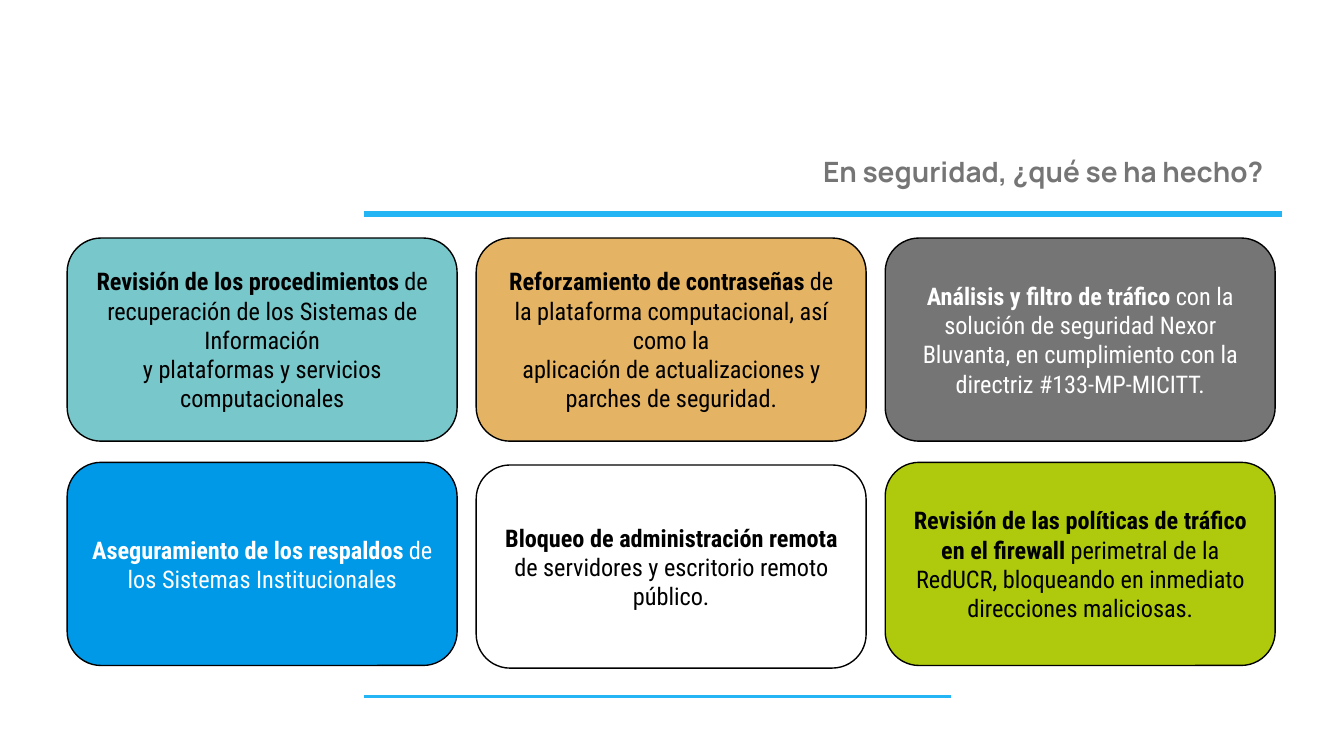
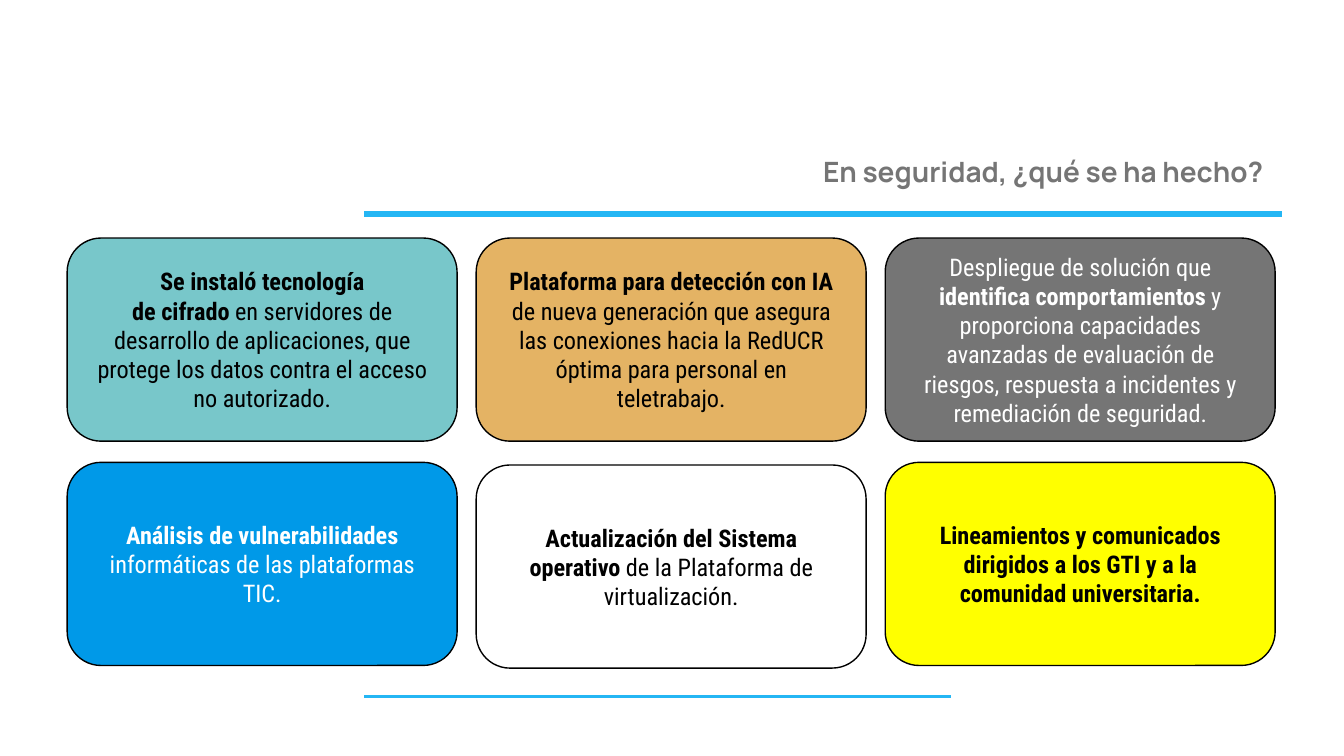
from lxml import etree
from pptx import Presentation
from pptx import util as u
from pptx.dml.color import RGBColor
from pptx.enum import shapes, text
from pptx.oxml.ns import qn

TITLE = "En seguridad, ¿qué se ha hecho?"
TITLE_FONT = "Manrope"
CARD_FONT = "Roboto Condensed"
BLACK, WHITE, GRAY, SKY = "000000", "FFFFFF", "757575", "24B6F4"
TEAL, SAND, BLUE, LIME, YELLOW = "78C7CA", "E4B364", "0099E8", "AFCA0C", "FFFF00"

COLUMNS = 3
GRID_BOX = (1.27, 4.5, 22.83, 8.08)
CARD_WIDTH, CARD_HEIGHT = 7.37, 3.84
CENTER_DROP = 0.05
TITLE_BOX = (6.81, 2.67, 17.32, 1.14)
RULES = [(6.88, 4.04, 17.35, 3), (6.88, 13.16, 11.1, 1.5)]

MEASURES = [
    (TEAL, BLACK, ["**Revisión de los procedimientos** de recuperación de los Sistemas de Información",
                   "y plataformas y servicios computacionales"]),
    (SAND, BLACK, ["**Reforzamiento de contraseñas** de la plataforma computacional, así como la",
                   "aplicación de actualizaciones y parches de seguridad."]),
    (GRAY, WHITE, ["**Análisis y filtro de tráfico** con la solución de seguridad Nexor",
                   "Bluvanta, en cumplimiento con la directriz #133-MP-MICITT."]),
    (BLUE, WHITE, ["**Aseguramiento de los respaldos** de los Sistemas Institucionales"]),
    (WHITE, BLACK, ["**Bloqueo de administración remota** de servidores y escritorio remoto público."]),
    (LIME, BLACK, ["**Revisión de las políticas de tráfico en el firewall** perimetral de la RedUCR, "
                   "bloqueando en inmediato direcciones maliciosas."]),
]
IMPROVEMENTS = [
    (TEAL, BLACK, ["**Se instaló tecnología**",
                   "**de cifrado** en servidores de desarrollo de aplicaciones, que protege los datos "
                   "contra el acceso no autorizado."]),
    (SAND, BLACK, ["**Plataforma para detección con IA** de nueva generación que asegura las conexiones "
                   "hacia la RedUCR óptima para personal en teletrabajo."]),
    (GRAY, WHITE, ["Despliegue de solución que **identifica comportamientos** y proporciona capacidades "
                   "avanzadas de evaluación de riesgos, respuesta a incidentes y remediación de seguridad."]),
    (BLUE, WHITE, ["**Análisis de vulnerabilidades** informáticas de las plataformas TIC."]),
    (WHITE, BLACK, ["**Actualización del Sistema operativo** de la Plataforma de virtualización."]),
    (YELLOW, BLACK, ["**Lineamientos y comunicados dirigidos a los GTI y a la comunidad universitaria.**"]),
]


def color(value):
    return RGBColor.from_string(value)


def style_paragraph(para, font, size, ink, align):
    para.alignment = align
    para.font.name = font
    para.font.size = u.Pt(size)
    para.font.color.rgb = color(ink)


def set_margins(frame):
    frame.word_wrap = True
    for side in ("left", "top", "right", "bottom"):
        setattr(frame, f"margin_{side}", u.Cm(0.25))


def add_title(page, box):
    title = page.shapes.title
    title.left, title.top, title.width, title.height = map(u.Cm, box)
    frame = title.text_frame
    frame.text = TITLE
    set_margins(frame)
    frame.vertical_anchor = text.MSO_ANCHOR.TOP
    frame.auto_size = text.MSO_AUTO_SIZE.SHAPE_TO_FIT_TEXT
    para = frame.paragraphs[0]
    style_paragraph(para, TITLE_FONT, 15, GRAY, text.PP_ALIGN.RIGHT)
    para.font.bold = True


def add_rule(page, left, top, length, weight):
    rule = page.shapes.add_connector(shapes.MSO_CONNECTOR.STRAIGHT, u.Cm(left), u.Cm(top),
                                     u.Cm(left + length), u.Cm(top))
    rule.line.color.rgb = color(SKY)
    rule.line.width = u.Pt(weight)
    etree.SubElement(rule._element.spPr, qn("a:effectLst"))


def add_card(page, box, fill, ink, lines):
    card = page.shapes.add_shape(shapes.MSO_SHAPE.ROUNDED_RECTANGLE, *map(u.Cm, box))
    card.shadow.inherit = False
    card.fill.solid()
    card.fill.fore_color.rgb = color(fill)
    card.line.color.rgb = color(BLACK)
    card.line.width = u.Pt(0.75)
    frame = card.text_frame
    set_margins(frame)
    frame.vertical_anchor = text.MSO_ANCHOR.MIDDLE
    for index, line in enumerate(lines):
        para = frame.add_paragraph() if index else frame.paragraphs[0]
        style_paragraph(para, CARD_FONT, 13, ink, text.PP_ALIGN.CENTER)
        for position, piece in enumerate(line.split("**")):
            if piece:
                span = para.add_run()
                span.text = piece
                span.font.bold = position % 2 == 1


def add_card_grid(page, box, cards):
    left, top, width, height = box
    column_step = (width - CARD_WIDTH) / (COLUMNS - 1)
    row_step = height - CARD_HEIGHT
    for index, (fill, ink, lines) in enumerate(cards):
        row, column = divmod(index, COLUMNS)
        drop = CENTER_DROP if (row, column) == (1, 1) else 0
        place = (left + column * column_step, top + row * row_step + drop, CARD_WIDTH, CARD_HEIGHT)
        add_card(page, place, fill, ink, lines)


def add_security_page(deck, cards):
    page = deck.slides.add_slide(deck.slide_layouts[5])
    for rule in RULES:
        add_rule(page, *rule)
    add_title(page, TITLE_BOX)
    add_card_grid(page, GRID_BOX, cards)


def main():
    deck = Presentation()
    deck.slide_width, deck.slide_height = u.Cm(25.4), u.Cm(14.29)
    for cards in (MEASURES, IMPROVEMENTS):
        add_security_page(deck, cards)
    deck.save("out.pptx")


if __name__ == "__main__":
    main()
